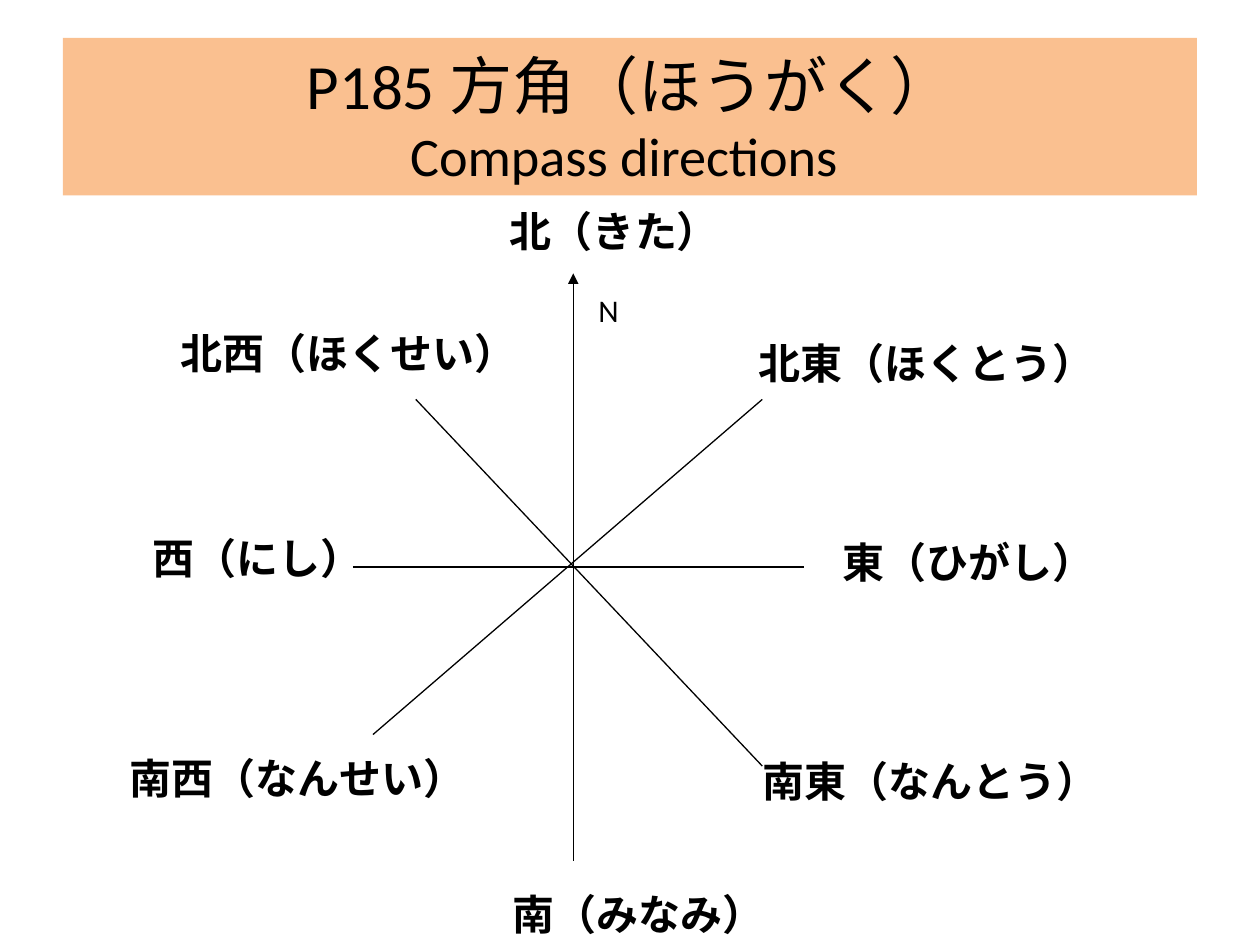
from lxml.etree import SubElement
from pptx import Presentation
from pptx.dml.color import RGBColor
from pptx.enum.shapes import MSO_CONNECTOR, MSO_SHAPE
from pptx.enum.text import MSO_ANCHOR, MSO_AUTO_SIZE, PP_ALIGN
from pptx.oxml.ns import qn
from pptx.util import Inches, Pt

BLACK = RGBColor(0x00, 0x00, 0x00)
PEACH = RGBColor(0xFA, 0xC0, 0x90)

LABEL_SIZE = 24
LABEL_HEIGHT = 0.5
LABEL_PADDING = 0.22

DIRECTIONS = [
    ("北（きた）", 3.01, 0),
    ("南（みなみ）", 3.04, 5.42),
    ("東（ひがし）", 5.66, 2.63),
    ("西（にし）", 0.18, 2.6),
    ("北東（ほくとう）", 4.99, 1.05),
    ("南東（なんとう）", 5.02, 4.37),
    ("北西（ほくせい）", 0.4, 0.97),
    ("南西（なんせい）", 0, 4.34),
]
AXES = [
    ((1.88, 2.92), (5.46, 2.92)),
    ((2.04, 4.25), (5.13, 1.59)),
    ((2.38, 1.59), (5.13, 4.5)),
]
NORTH_AXIS = ((3.63, 5.25), (3.63, 0.59))


def style(font, name, size, bold=False):
    font.name = name
    font.size = Pt(size)
    font.bold = bold
    font.color.rgb = BLACK


def add_title(page, left, top, width, height):
    banner = page.shapes.add_shape(
        MSO_SHAPE.RECTANGLE, Inches(left), Inches(top), Inches(width), Inches(height))
    banner.shadow.inherit = False
    banner.fill.solid()
    banner.fill.fore_color.rgb = PEACH
    banner.line.fill.background()
    frame = banner.text_frame
    frame.word_wrap = True
    frame.vertical_anchor = MSO_ANCHOR.MIDDLE
    para = frame.paragraphs[0]
    para.alignment = PP_ALIGN.CENTER
    for index, (text, size) in enumerate([("P185 方角（ほうがく）", 36), ("Compass directions ", 31)]):
        if index:
            para.add_line_break()
        span = para.add_run()
        span.text = text
        style(span.font, "Calibri", size)


def add_axis(page, left, top, start, end):
    axis = page.shapes.add_connector(
        MSO_CONNECTOR.STRAIGHT,
        Inches(left + start[0]), Inches(top + start[1]),
        Inches(left + end[0]), Inches(top + end[1]))
    axis.line.color.rgb = BLACK
    axis.line.width = Pt(0.75)
    SubElement(axis._element.spPr, qn("a:effectLst"))
    return axis


def add_label(page, left, top, width, text, font_name, size, bold, alignment):
    box = page.shapes.add_textbox(
        Inches(left), Inches(top), Inches(width), Inches(LABEL_HEIGHT))
    frame = box.text_frame
    frame.word_wrap = False
    frame.auto_size = MSO_AUTO_SIZE.SHAPE_TO_FIT_TEXT
    para = frame.paragraphs[0]
    para.text = text
    para.alignment = alignment
    style(para.font, font_name, size, bold)


def add_compass(page, left, top):
    north = add_axis(page, left, top, *NORTH_AXIS)
    SubElement(north.line._get_or_add_ln(), qn("a:tailEnd"), type="triangle")
    for start, end in AXES:
        add_axis(page, left, top, start, end)
    add_label(page, left + 3.73, top + 0.68, 0.44, "N", "Calibri", 18, False, PP_ALIGN.LEFT)
    for text, x, y in DIRECTIONS:
        width = len(text) * LABEL_SIZE / 72 + LABEL_PADDING
        add_label(page, left + x, top + y, width, text, "Lato", LABEL_SIZE, True, PP_ALIGN.CENTER)


def main():
    deck = Presentation()
    deck.slide_width = Inches(10)
    deck.slide_height = Inches(7.5)
    page = deck.slides.add_slide(deck.slide_layouts[6])
    add_compass(page, 0.92, 1.58)
    add_title(page, 0.5, 0.3, 9, 1.25)
    deck.save("out.pptx")


if __name__ == "__main__":
    main()
